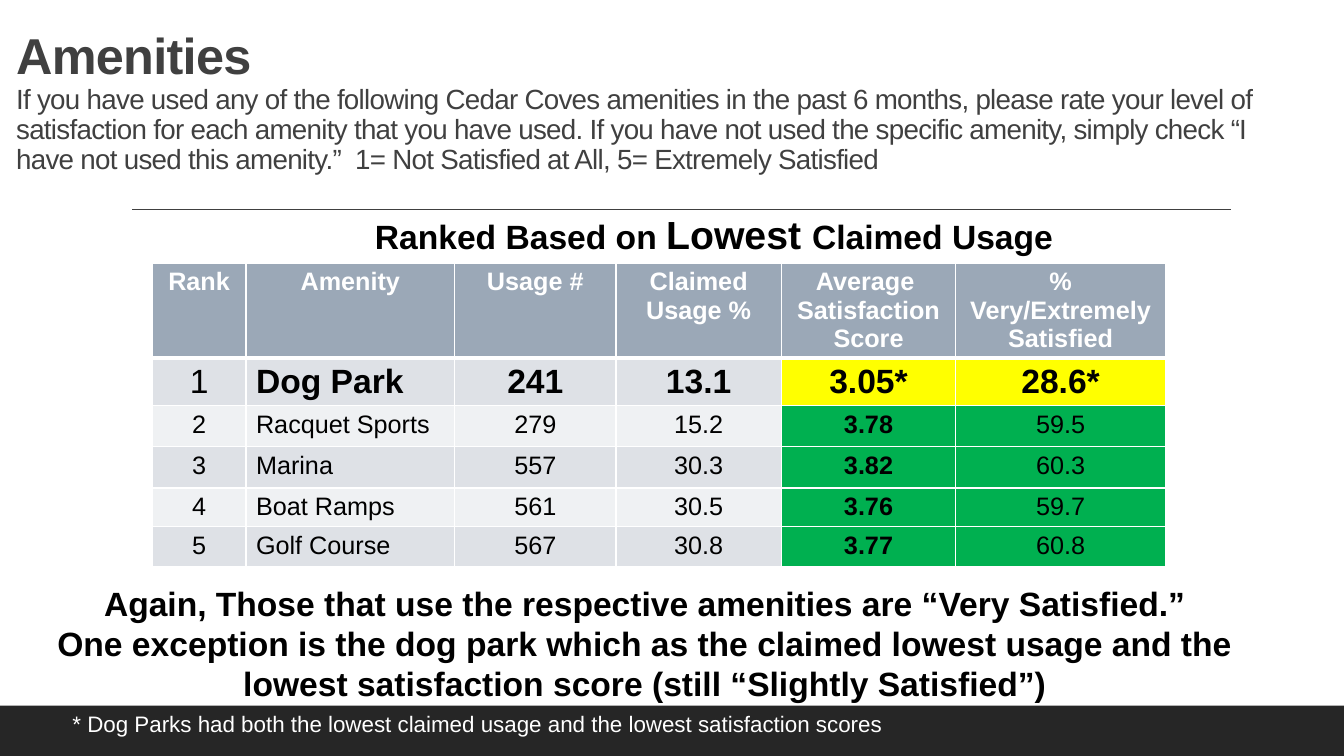
from lxml.etree import SubElement
from pptx import Presentation
from pptx.dml.color import RGBColor
from pptx.enum.shapes import MSO_CONNECTOR, MSO_SHAPE
from pptx.enum.text import MSO_ANCHOR, MSO_AUTO_SIZE, PP_ALIGN
from pptx.oxml.ns import qn
from pptx.util import Inches, Pt

COLORS = {
    "white": "FFFFFF", "black": "000000", "gray": "404040", "bar": "262626",
    "head": "9BA8B7", "odd": "DEE1E6", "even": "EFF1F3",
    "yellow": "FFFF00", "green": "00B050",
}
WIDTHS = [0.93, 2.07, 1.6, 1.64, 1.73, 2.08]
HEIGHTS = [0.93, 0.47, 0.41, 0.41, 0.38, 0.4]
ROWS = [
    ["Rank", "Amenity", "Usage #", "Claimed\nUsage %",
     "Average \nSatisfaction Score", "% Very/Extremely Satisfied"],
    ["1", "Dog Park", "241", "13.1", "3.05*", "28.6*"],
    ["2", "Racquet Sports", "279", "15.2", "3.78", "59.5"],
    ["3", "Marina", "557", "30.3", "3.82", "60.3"],
    ["4", "Boat Ramps", "561", "30.5", "3.76", "59.7"],
    ["5", "Golf Course", "567", "30.8", "3.77", "60.8"],
]
PROMPT = (
    "If you have used any of the following Cedar Coves amenities in the past "
    "6 months, please rate your level of satisfaction for each amenity that "
    "you have used. If you have not used the specific amenity, simply check "
    "“I have not used this amenity.”\u00a0 1= Not Satisfied at All, "
    "5= Extremely Satisfied"
)
CLOSING = [
    "Again, Those that use the respective amenities are “Very Satisfied.”",
    "One exception is the dog park which as the claimed lowest usage and the",
    "lowest satisfaction score (still “Slightly Satisfied”)",
]


def rgb(name):
    return RGBColor.from_string(COLORS[name])


def style(font, size, color, bold=False):
    values = {"name": "Arial", "size": Pt(size), "bold": bold}
    for key, value in values.items():
        setattr(font, key, value)
    font.color.rgb = rgb(color)


def add_run(para, text, size, color, bold=False):
    run = para.add_run()
    run.text = text
    style(run.font, size, color, bold)
    return run


def add_bar(slide):
    bar = slide.shapes.add_shape(
        MSO_SHAPE.RECTANGLE, 0, Inches(7), Inches(13.33), Inches(0.5))
    bar.shadow.inherit = False
    bar.fill.solid()
    bar.fill.fore_color.rgb = rgb("bar")
    bar.line.fill.background()


def add_rule(slide):
    rule = slide.shapes.add_connector(
        MSO_CONNECTOR.STRAIGHT,
        Inches(1.31), Inches(2.08), Inches(12.21), Inches(2.08))
    rule.line.color.rgb = rgb("gray")
    rule.line.width = Pt(1)
    SubElement(rule._element.spPr, qn("a:effectLst"))


def set_title(slide):
    title = slide.shapes.title
    place = {"left": 0.06, "top": 0.2, "width": 12.81, "height": 1.59}
    for key, value in place.items():
        setattr(title, key, Inches(value))
    frame = title.text_frame
    frame.word_wrap = True
    frame.auto_size = MSO_AUTO_SIZE.NONE
    frame.vertical_anchor = MSO_ANCHOR.BOTTOM
    para = frame.paragraphs[0]
    para.alignment = PP_ALIGN.LEFT
    para.line_spacing = 0.9
    head = add_run(para, "Amenities", 36, "gray", True)
    para.add_line_break()
    prompt = add_run(para, PROMPT, 19.8, "gray")
    for run in (head, prompt):
        run._r.get_or_add_rPr().set("spc", "-50")


def add_text(slide, box, paras, color, bold=False, wrap=False,
             align=PP_ALIGN.LEFT):
    """Add a text box; each paragraph is a list of (text, size) runs."""
    frame = slide.shapes.add_textbox(*map(Inches, box)).text_frame
    frame.word_wrap = wrap
    frame.auto_size = MSO_AUTO_SIZE.SHAPE_TO_FIT_TEXT
    for i, runs in enumerate(paras):
        para = frame.add_paragraph() if i else frame.paragraphs[0]
        para.alignment = align
        for text, size in runs:
            add_run(para, text, size, color, bold)


def set_edges(cell, row):
    """Draw white borders, thick between the header and the first row."""
    thick = {0: "lnB", 1: "lnT"}.get(row)
    props = cell._tc.get_or_add_tcPr()
    for side in ("lnL", "lnR", "lnT", "lnB"):
        width = Pt(3 if side == thick else 1)
        edge = SubElement(props, qn(f"a:{side}"), w=str(width))
        fill = SubElement(edge, qn("a:solidFill"))
        SubElement(fill, qn("a:srgbClr"), val=COLORS["white"])


def cell_fill(row, col):
    if row == 0:
        return "head"
    if col >= 4:
        return "yellow" if row == 1 else "green"
    return "odd" if row % 2 else "even"


def fill_cell(cell, text, row, col):
    set_edges(cell, row)
    cell.fill.solid()
    cell.fill.fore_color.rgb = rgb(cell_fill(row, col))
    cell.text = text
    bold = row == 0 or col == 4 or (row == 1 and col > 0)
    for para in cell.text_frame.paragraphs:
        left = row > 0 and col == 1
        para.alignment = PP_ALIGN.LEFT if left else PP_ALIGN.CENTER
        for run in para.runs:
            style(run.font, 24 if row == 1 else 18,
                  "black" if row else "white", bold)


def add_grid(slide):
    table = slide.shapes.add_table(
        len(ROWS), len(WIDTHS), Inches(1.51), Inches(2.61),
        Inches(sum(WIDTHS)), Inches(sum(HEIGHTS))).table
    for column, width in zip(table.columns, WIDTHS):
        column.width = Inches(width)
    for i, (height, texts) in enumerate(zip(HEIGHTS, ROWS)):
        table.rows[i].height = Inches(height)
        for j, text in enumerate(texts):
            fill_cell(table.cell(i, j), text, i, j)


def main():
    deck = Presentation()
    deck.slide_width, deck.slide_height = Inches(13.33), Inches(7.5)
    slide = deck.slides.add_slide(deck.slide_layouts[5])
    add_bar(slide)
    add_rule(slide)
    set_title(slide)
    add_grid(slide)
    add_text(slide, (3.62, 2.04, 7, 0.57),
             [[("Ranked Based on ", 24), ("Lowest ", 28),
               ("Claimed Usage", 24)]], "black", bold=True)
    add_text(slide, (0.62, 7, 8.33, 0.37),
             [[("* Dog Parks had both the lowest claimed usage and the "
                "lowest satisfaction scores", 16)]], "white")
    add_text(slide, (-0.04, 5.73, 12.87, 1.31),
             [[(line, 24)] for line in CLOSING], "black", bold=True,
             wrap=True, align=PP_ALIGN.CENTER)
    deck.save("out.pptx")


if __name__ == "__main__":
    main()
